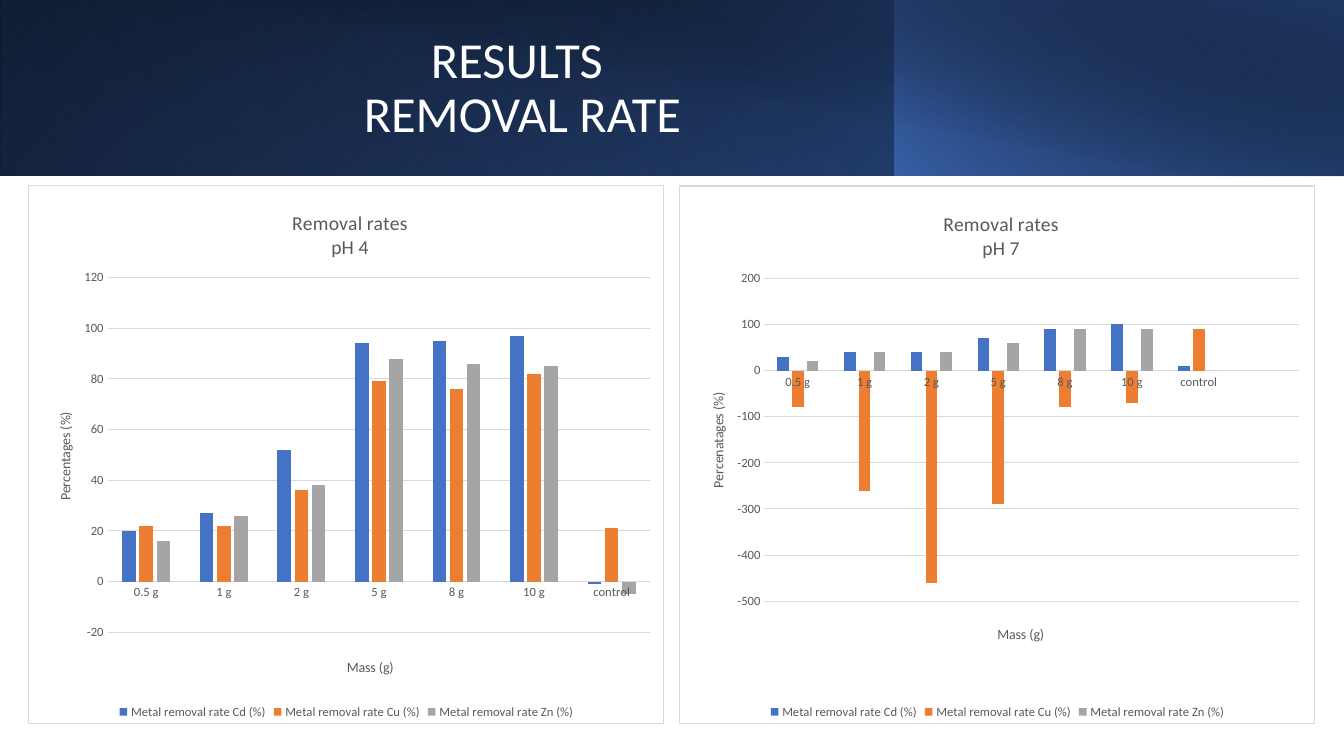
import pptx
import pptx.chart.data
import pptx.dml.color
import pptx.enum.chart
import pptx.enum.shapes
import pptx.enum.text
import pptx.oxml
import pptx.util
from lxml import etree

Pt = pptx.util.Pt
FONT = "Calibri"
COLORS = {
    "black": "000000", "white": "FFFFFF", "navy": "203864", "deep": "2F5597",
    "blue": "4472C4", "orange": "ED7D31", "gray": "A5A5A5",
    "text": "595959", "rule": "D9D9D9",
}

# Content
TITLE = "RESULTS \vREMOVAL RATE"
MASSES = ["0.5 g", "1 g", "2 g", "5 g", "8 g", "10 g", "control"]
METALS = [("Cd", "blue"), ("Cu", "orange"), ("Zn", "gray")]
# Each band: box, gradient angle (clockwise), rotation, mirrored, stops (position, color, opacity)
BANDS = [
    ((0, 0, 960, 125.3), 140, 0, True, [(0, "black", 100), (100, "deep", 100)]),
    ((0, 0, 639.3, 125.3), 230, 180, True, [(20, "blue", 0), (100, "navy", 55)]),
    ((638.7, 0, 321.3, 125.3), 220, 0, True, [(0, "blue", 66), (100, "black", 30)]),
    ((36, 0, 924, 126), 280, 0, False, [(50, "black", 0), (99, "navy", 52)]),
]
# Layout values are fractions of the chart box
CHARTS = [
    dict(box=(20.2, 131.8, 454.3, 385.2), title="Removal rates\npH 4",
         masses=MASSES, value_title="Percentages (%)", scale=(-20, 120, 20),
         plot=(0.124, 0.172, 0.855, 0.659), mass_at=(0.497, 0.875), value_at=(0.039, 0.417),
         rates=[[20, 27, 52, 94, 95, 97, -1],
                [22, 22, 36, 79, 76, 82, 21],
                [16, 26, 38, 88, 86, 85, -5]]),
    dict(box=(485.3, 132.5, 454.3, 384.5), title="Removal rates\npH 7",
         masses=MASSES + [""], value_title="Percenatages (%)", scale=(-500, 200, 100),
         plot=(0.133, 0.172, 0.842, 0.601), mass_at=(0.496, 0.813), value_at=(0.042, 0.38),
         rates=[[30, 40, 40, 70, 90, 100, 10, None],
                [-80, -260, -460, -290, -80, -70, 90, None],
                [20, 40, 40, 60, 90, 90, 0, None]]),
]


def rgb(name):
    return pptx.dml.color.RGBColor.from_string(COLORS[name])


def style(font, size, color):
    font.name, font.size, font.bold = FONT, Pt(size), False
    font.color.rgb = rgb(color)


def write(tf, text, size=10, color="text", spacing=None):
    for i, line in enumerate(text.split("\n")):
        p = tf.add_paragraph() if i else tf.paragraphs[0]
        p.text = line
        p.alignment = pptx.enum.text.PP_ALIGN.CENTER
        if spacing:
            p.line_spacing = spacing
        for r in p.runs:
            style(r.font, size, color)


def add_band(s, box, angle, rotation, mirrored, stops):
    sp = s.shapes.add_shape(pptx.enum.shapes.MSO_SHAPE.RECTANGLE, *map(Pt, box))
    sp.shadow.inherit = False
    sp.line.fill.background()
    sp.rotation = rotation
    if mirrored:
        sp._element.spPr.xfrm.set("flipH", "1")
    sp.fill.gradient()
    sp.fill.gradient_angle = 360 - angle
    for stop, (position, color, opacity) in zip(sp.fill.gradient_stops, stops):
        stop.position = position / 100
        stop.color.rgb = rgb(color)
        if opacity < 100:
            srgb = stop._gs.find(pptx.oxml.ns.qn("a:srgbClr"))
            etree.SubElement(srgb, pptx.oxml.ns.qn("a:alpha"), val=str(opacity * 1000))


def place(parent, index, *fractions):
    """Fix the position, and the size if given, of a chart part."""
    qn = pptx.oxml.ns.qn
    for old in parent.findall(qn("c:layout")):
        parent.remove(old)
    layout = etree.Element(qn("c:layout"))
    manual = etree.SubElement(layout, qn("c:manualLayout"))
    if len(fractions) == 4:
        etree.SubElement(manual, qn("c:layoutTarget"), val="inner")
    for key in ("xMode", "yMode"):
        etree.SubElement(manual, qn("c:" + key), val="edge")
    for key, value in zip("xywh", fractions):
        etree.SubElement(manual, qn("c:" + key), val=str(value))
    parent.insert(index, layout)


def frame_chart(chart):
    """Give the chart area a white fill and a thin border."""
    sppr = pptx.oxml.parse_xml(
        f'<c:spPr {pptx.oxml.ns.nsdecls("c", "a")}>'
        f'<a:solidFill><a:srgbClr val="{COLORS["white"]}"/></a:solidFill>'
        f'<a:ln w="9525"><a:solidFill><a:srgbClr val="{COLORS["rule"]}"/></a:solidFill></a:ln>'
        '</c:spPr>')
    chart._chartSpace.find(pptx.oxml.ns.qn("c:txPr")).addprevious(sppr)


def rule(line):
    line.color.rgb = rgb("rule")
    line.width = Pt(0.75)


def add_rate_chart(s, box, title, masses, value_title, scale, plot, mass_at, value_at, rates):
    xl = pptx.enum.chart
    data = pptx.chart.data.CategoryChartData(number_format="0")
    data.categories = masses
    for (metal, _), values in zip(METALS, rates):
        data.add_series(f"Metal removal rate {metal} (%)", values)
    chart = s.shapes.add_chart(xl.XL_CHART_TYPE.COLUMN_CLUSTERED, *map(Pt, box), data).chart
    style(chart.font, 10, "black")
    frame_chart(chart)

    # Columns
    bars = chart.plots[0]
    bars.gap_width, bars.overlap, bars.vary_by_categories = 219, -27, False
    for series, (_, color) in zip(bars.series, METALS):
        series.format.fill.solid()
        series.format.fill.fore_color.rgb = rgb(color)
        series.invert_if_negative = False
    place(chart._chartSpace.chart.plotArea, 0, *plot)

    # Axes
    mass_axis, value_axis = chart.category_axis, chart.value_axis
    for axis, text, spot in ((mass_axis, "Mass (g)", mass_at),
                             (value_axis, value_title, value_at)):
        axis.major_tick_mark = axis.minor_tick_mark = xl.XL_TICK_MARK.NONE
        style(axis.tick_labels.font, 9, "text")
        write(axis.axis_title.text_frame, text)
        place(axis.axis_title._element, 1, *spot)
    value_axis.axis_title.text_frame._txBody.bodyPr.set("rot", "-5400000")
    rule(mass_axis.format.line)
    value_axis.format.line.fill.background()
    rule(value_axis.major_gridlines.format.line)
    value_axis.minimum_scale, value_axis.maximum_scale, value_axis.major_unit = scale
    value_axis.tick_labels.number_format = "0"
    value_axis.tick_labels.number_format_is_linked = False

    # Title and legend
    write(chart.chart_title.text_frame, title, size=14)
    place(chart.chart_title._element, 1, 0.41, 0.04)
    chart.has_legend = True
    chart.legend.position = xl.XL_LEGEND_POSITION.BOTTOM
    chart.legend.include_in_layout = False
    style(chart.legend.font, 9, "text")


def main():
    prs = pptx.Presentation()
    prs.slide_width, prs.slide_height = Pt(960), Pt(540)
    s = prs.slides.add_slide(prs.slide_layouts[5])

    # Header bands
    for band in BANDS:
        add_band(s, *band)

    # Title, in front of the bands
    title = s.shapes.title
    title.left, title.top, title.width, title.height = map(Pt, (108, 23, 530.6, 81.4))
    title.text_frame.vertical_anchor = pptx.enum.text.MSO_ANCHOR.MIDDLE
    title.text_frame.auto_size = pptx.enum.text.MSO_AUTO_SIZE.NONE
    write(title.text_frame, TITLE, size=36, color="white", spacing=0.9)
    s.shapes._spTree.append(title._element)

    # Charts
    for chart in CHARTS:
        add_rate_chart(s, **chart)
    prs.save("out.pptx")


if __name__ == "__main__":
    main()
